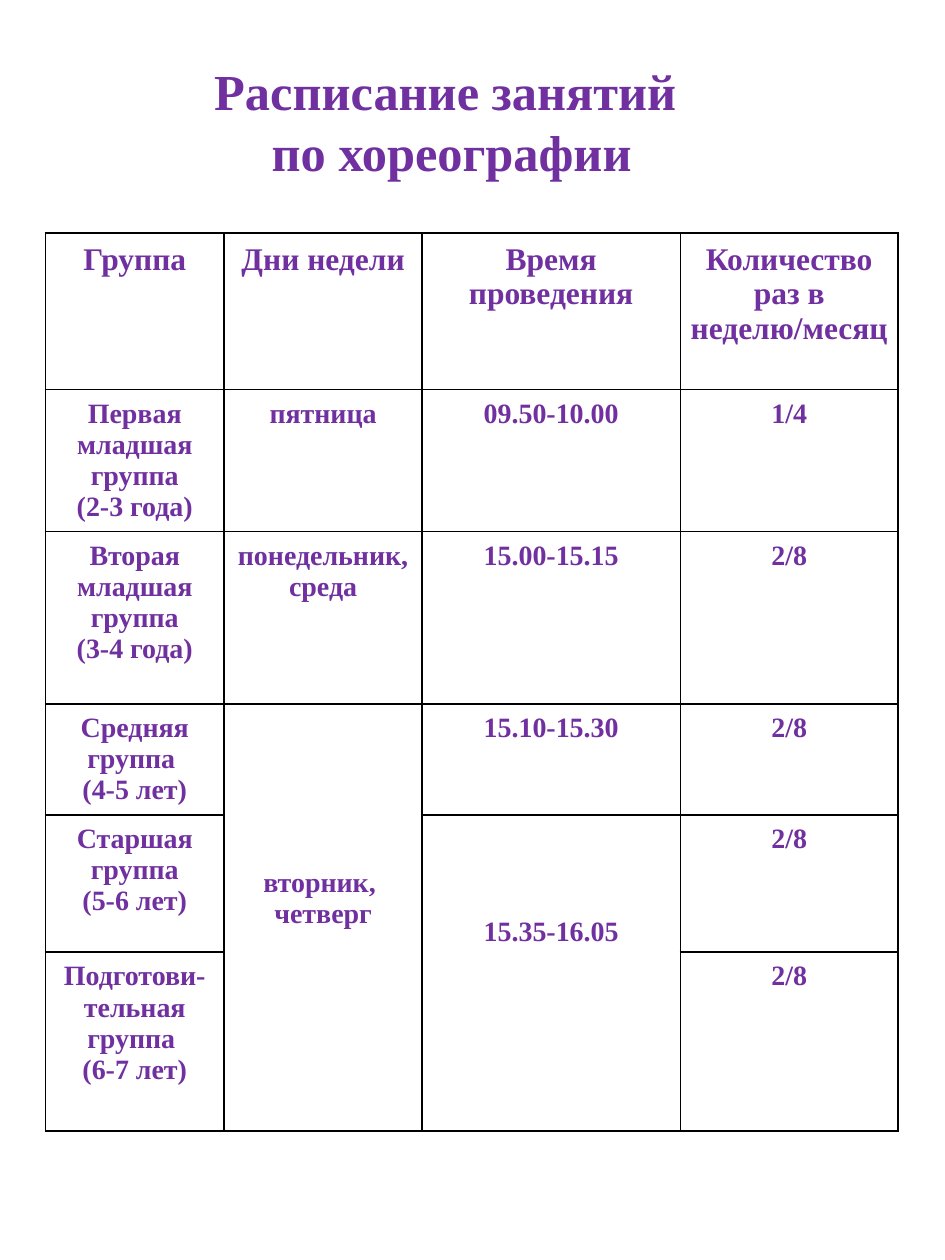
"""Build the dance class timetable slide."""
import pptx
import pptx.util
import pptx.dml.color
import pptx.enum.text
import pptx.oxml
import pptx.oxml.ns
from pptx.util import Inches


def rgb(value):
    return pptx.dml.color.RGBColor.from_string(value)


class Deck:
    font = "Times New Roman"
    ink = "7030A0"
    line = "000000"
    inset = 0.07

    def __init__(self, width, height):
        self.prs = pptx.Presentation()
        self.prs.slide_width = Inches(width)
        self.prs.slide_height = Inches(height)
        self.s = self.prs.slides.add_slide(self.prs.slide_layouts[5])

    def run(self, p, text, size):
        p.alignment = pptx.enum.text.PP_ALIGN.CENTER
        r = p.add_run()
        r.text = text
        r.font.name = self.font
        r.font.size = pptx.util.Pt(size)
        r.font.bold = True
        r.font.color.rgb = rgb(self.ink)

    def title(self, lines, left, top, width, height, size, bottom):
        sp = self.s.shapes.title
        sp.left, sp.top = Inches(left), Inches(top)
        sp.width, sp.height = Inches(width), Inches(height)
        tf = sp.text_frame
        tf.word_wrap = True
        tf.auto_size = pptx.enum.text.MSO_AUTO_SIZE.NONE
        tf.vertical_anchor = pptx.enum.text.MSO_ANCHOR.MIDDLE
        tf.margin_bottom = Inches(bottom)
        p = tf.paragraphs[0]
        for i, text in enumerate(lines):
            if i:
                p.add_line_break()
            self.run(p, text, size)

    def borders(self, cell):
        tc_pr = cell._tc.get_or_add_tcPr()
        for i, side in enumerate(("lnL", "lnR", "lnT", "lnB")):
            tc_pr.insert(i, pptx.oxml.parse_xml(
                f'<a:{side} {pptx.oxml.ns.nsdecls("a")} w="12700"><a:solidFill>'
                f'<a:srgbClr val="{self.line}"/></a:solidFill></a:{side}>'))

    def cell(self, cell, lines, size):
        cell.margin_left = cell.margin_right = Inches(self.inset)
        cell.margin_top = cell.margin_bottom = Inches(self.inset)
        tf = cell.text_frame
        for i, text in enumerate(lines):
            p = tf.add_paragraph() if i else tf.paragraphs[0]
            self.run(p, text, size)
        cell.fill.background()
        self.borders(cell)

    def table(self, rows, left, top, widths, heights, head_size, size):
        frame = self.s.shapes.add_table(
            len(rows), len(widths), Inches(left), Inches(top),
            Inches(sum(widths)), Inches(sum(heights)))
        tbl = frame.table
        tbl.first_row = tbl.horz_banding = False
        for col, width in zip(tbl.columns, widths):
            col.width = Inches(width)
        for row, height in zip(tbl.rows, heights):
            row.height = Inches(height)
        for i, row in enumerate(rows):
            for j, text in enumerate(row):
                lines = text.split("\n") if text else []
                self.cell(tbl.cell(i, j), lines, size if i else head_size)
        return tbl

    def merge(self, tbl, first, last, margin_top):
        cell = tbl.cell(*first)
        cell.merge(tbl.cell(*last))
        cell.margin_top = Inches(margin_top)


ROWS = [
    ["Группа", "Дни недели", "Время проведения", "Количество раз в неделю/месяц"],
    ["Первая младшая группа\n(2-3 года)", "пятница", "09.50-10.00", "1/4"],
    ["Вторая младшая группа\n(3-4 года)", "понедельник, среда", "15.00-15.15", "2/8"],
    ["Средняя группа \n(4-5 лет)", "вторник, \nчетверг", "15.10-15.30", "2/8"],
    ["Старшая группа\n(5-6 лет)", "", "15.35-16.05", "2/8"],
    ["Подготови-тельная группа \n(6-7 лет)", "", "", "2/8"],
]


def main():
    deck = Deck(7.5, 10)
    deck.title(["Расписание занятий ", "по хореографии"],
               0.21, 0.35, 6.75, 1.67, 28.8, 0.5)
    tbl = deck.table(ROWS, 0.36, 1.85, [1.42, 1.57, 2.05, 1.73],
                     [1.24, 1.12, 1.37, 0.87, 1.09, 1.42], 18, 16)
    deck.merge(tbl, (3, 1), (5, 1), 1.3)
    deck.merge(tbl, (4, 2), (5, 2), 0.81)
    deck.prs.save("out.pptx")


if __name__ == "__main__":
    main()
